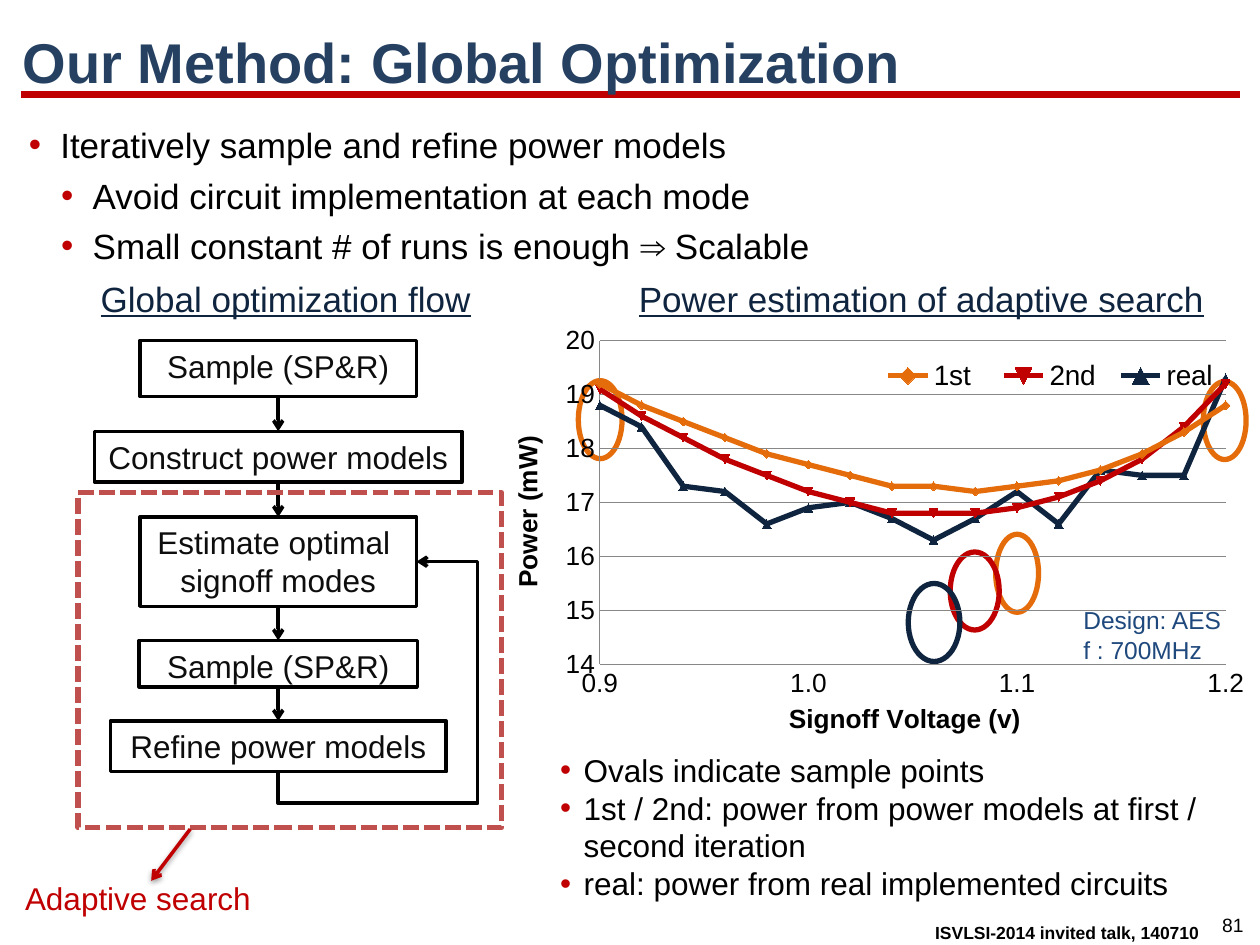
"""Build the slide on global optimization with adaptive search."""
from itertools import pairwise
from lxml.etree import SubElement
from pptx import Presentation
from pptx.chart.data import XyChartData
from pptx.dml.color import RGBColor
from pptx.enum.chart import XL_CHART_TYPE as ChartType, XL_LEGEND_POSITION as LegendPosition
from pptx.enum.chart import XL_MARKER_STYLE as MarkerStyle, XL_TICK_MARK as TickMark
from pptx.enum.dml import MSO_LINE as Dash
from pptx.enum.shapes import MSO_CONNECTOR as Connector, MSO_SHAPE as Shape
from pptx.enum.text import MSO_ANCHOR as Anchor, PP_ALIGN as Align
from pptx.oxml import parse_xml
from pptx.oxml.ns import nsdecls, qn
from pptx.util import Pt

color = RGBColor.from_string
BLACK, RED, NAVY, ORANGE = "000000", "C00000", "0F243E", "E46C0A"


def write(shape, lines, size, ink, align=Align.LEFT, wrap=True, anchor=Anchor.TOP,
          bold=False, underline=False, indents=None, hanging=0, gap=0):
    """Put paragraphs in a shape, with red bullets where indents are given."""
    frame = shape.text_frame
    frame.word_wrap, frame.vertical_anchor = wrap, anchor
    for index, line in enumerate(lines):
        paragraph = frame.paragraphs[0] if index == 0 else frame.add_paragraph()
        paragraph.text = line
        paragraph.alignment = align
        if indents:
            properties = paragraph._p.get_or_add_pPr()
            properties.set("marL", str(Pt(indents[index])))
            properties.set("indent", str(Pt(-hanging)))
            bullet_color = SubElement(properties, qn("a:buClr"))
            SubElement(bullet_color, qn("a:srgbClr"), val=RED)
            SubElement(properties, qn("a:buFont"), typeface="Arial")
            SubElement(properties, qn("a:buChar"), char="•")
        if index and gap:
            paragraph.space_before = Pt(gap)
        font = paragraph.font
        font.name, font.size, font.color.rgb = "Arial", Pt(size), color(ink)
        font.bold = bold
        if underline:
            font.underline = True


def draw_line(shape, ink, width, arrow=False):
    """Style an outline without a shadow, with an arrowhead at its end if asked."""
    shape.line.color.rgb, shape.line.width = color(ink), Pt(width)
    properties = shape._element.spPr
    if arrow:
        SubElement(properties.find(qn("a:ln")), qn("a:tailEnd"), type="arrow")
    if properties.find(qn("a:effectLst")) is None:
        SubElement(properties, qn("a:effectLst"))


presentation = Presentation()
presentation.slide_width, presentation.slide_height = Pt(720), Pt(540)
slide = presentation.slides.add_slide(presentation.slide_layouts[6])
shapes = slide.shapes

title_rule = shapes.add_connector(Connector.STRAIGHT, Pt(12), Pt(54), Pt(708.5), Pt(54))
draw_line(title_rule, RED, 4.5)

texts = [
    ((690.5, 518.4, 28, 21), ["81"], 11, BLACK, dict(align=Align.CENTER, wrap=False)),
    ((499, 523.4, 193, 19), ["ISVLSI-2014 invited talk, 140710"], 10, BLACK,
     dict(align=Align.RIGHT, bold=True)),
    ((6, 12.5, 714, 44.5), ["Our Method: Global Optimization"], 32, "254061",
     dict(anchor=Anchor.MIDDLE, bold=True)),
    ((9.4, 67, 695.5, 91.5),
     ["Iteratively sample and refine power models",
      "Avoid circuit implementation at each mode",
      "Small constant # of runs is enough ⇒ Scalable"], 20, BLACK,
     dict(indents=[18, 36.5, 36.5], hanging=18, gap=5)),
    ((7.2, 499, 165, 29), ["Adaptive search"], 18, RED, {}),
    ((50.4, 155, 234, 31.5), ["Global optimization flow"], 20, NAVY, dict(underline=True)),
    ((358, 155, 342, 31.5), ["Power estimation of adaptive search"], 20, NAVY,
     dict(underline=True)),
    ((313, 425.5, 379, 94.5),
     ["Ovals indicate sample points",
      "1st / 2nd: power from power models at first / second iteration",
      "real: power from real implemented circuits"], 18, BLACK,
     dict(indents=[13.5] * 3, hanging=13.5)),
    ((612, 345.6, 97, 34), ["Design: AES", "f : 700MHz"], 14, "1F497D",
     dict(anchor=Anchor.MIDDLE)),
]
for place, lines, size, ink, options in texts:
    write(shapes.add_textbox(*map(Pt, place)), lines, size, ink, **options)

flow_center = 159
flow_steps = [
    (194.5, 158, 32, ["Sample (SP&R)"]),
    (246.5, 210, 29, ["Construct power models"]),
    (295.5, 158, 51, ["Estimate optimal ", "signoff modes"]),
    (366, 159, 26.5, ["Sample (SP&R)"]),
    (412, 192, 29, ["Refine power models"]),
]
boxes = []
for top, width, height, lines in flow_steps:
    box = shapes.add_shape(Shape.RECTANGLE, Pt(flow_center - width / 2), Pt(top),
                           Pt(width), Pt(height))
    box.fill.solid()
    box.fill.fore_color.rgb = color("FFFFFF")
    box.shadow.inherit = False
    draw_line(box, BLACK, 2)
    write(box, lines, 18, "0D0D0D", align=Align.CENTER, wrap=False)
    boxes.append(box)
for upper, lower in pairwise(boxes):
    connector = shapes.add_connector(Connector.STRAIGHT, 0, 0, 0, 0)
    connector.begin_connect(upper, 2)
    connector.end_connect(lower, 0)
    draw_line(connector, BLACK, 2, arrow=True)

loop_builder = shapes.build_freeform(Pt(flow_center), Pt(441))
loop_builder.add_line_segments(
    [(Pt(x), Pt(y)) for x, y in [(flow_center, 459), (273, 459), (273, 321), (238, 321)]],
    close=False)
loop = loop_builder.convert_to_shape()
loop.fill.background()
loop.shadow.inherit = False
draw_line(loop, BLACK, 2, arrow=True)

search_frame = shapes.add_shape(Shape.RECTANGLE, Pt(44.6), Pt(281.5), Pt(242), Pt(191.5))
search_frame.fill.background()
search_frame.shadow.inherit = False
draw_line(search_frame, "C0504D", 3)
search_frame.line.dash_style = Dash.SQUARE_DOT

pointer = shapes.add_connector(Connector.STRAIGHT, Pt(108.7), Pt(473.8), Pt(86.4), Pt(503.3))
draw_line(pointer, RED, 2, arrow=True)
effects = pointer._element.spPr.find(qn("a:effectLst"))
shadow = SubElement(effects, qn("a:outerShdw"), blurRad="40000", dist="20000",
                    dir="5400000", rotWithShape="0")
shadow_color = SubElement(shadow, qn("a:srgbClr"), val=BLACK)
SubElement(shadow_color, qn("a:alpha"), val="38000")

ovals = [(330.5, 217.5, 25, ORANGE), (569, 305.3, 24.5, ORANGE), (687.6, 218, 24.5, ORANGE),
         (543, 315.4, 28, RED), (519, 333.4, 29.5, NAVY)]
for left, top, width, ink in ovals:
    oval = shapes.add_shape(Shape.OVAL, Pt(left), Pt(top), Pt(width), Pt(44.6))
    oval.fill.background()
    oval.shadow.inherit = False
    draw_line(oval, ink, 3)

power_series = [
    ("1st ", ORANGE, [19.2, 18.8, 18.5, 18.2, 17.9, 17.7, 17.5, 17.3,
                      17.3, 17.2, 17.3, 17.4, 17.6, 17.9, 18.3, 18.8]),
    ("2nd", RED, [19.1, 18.6, 18.2, 17.8, 17.5, 17.2, 17, 16.8,
                  16.8, 16.8, 16.9, 17.1, 17.4, 17.8, 18.4, 19.2]),
    ("real", NAVY, [18.8, 18.4, 17.3, 17.2, 16.6, 16.9, 17, 16.7,
                    16.3, 16.7, 17.2, 16.6, 17.6, 17.5, 17.5, 19.3]),
]
chart_data = XyChartData()
for name, ink, powers in power_series:
    data_series = chart_data.add_series(name)
    for step, power in enumerate(powers):
        data_series.add_data_point(round(0.9 + 0.02 * step, 2), power)
chart = shapes.add_chart(ChartType.XY_SCATTER_SMOOTH, Pt(286), Pt(183.6), Pt(433.5), Pt(240),
                         chart_data).chart
chart.has_title = False
chart.font.name, chart.font.size, chart.font.color.rgb = "Arial", Pt(20), color(BLACK)
chart.plots[0].vary_by_categories = False

for index, (series, (name, ink, powers)) in enumerate(zip(chart.plots[0].series, power_series)):
    series._element.find(qn("c:idx")).set("val", str(index + 1))
    series.smooth = True
    series.format.line.color.rgb, series.format.line.width = color(ink), Pt(3)
    marker = series.marker
    marker.style, marker.size = MarkerStyle.AUTOMATIC, 5
    marker.format.fill.solid()
    marker.format.fill.fore_color.rgb = color(ink)
    marker.format.line.color.rgb = color(ink)

axes = [(chart.category_axis, "Signoff Voltage (v)", 0.9, 1.2, 0.1, "#,##0.0"),
        (chart.value_axis, "Power (mW)", 14, 20, 1, "General")]
for axis, caption, low, high, unit, number_format in axes:
    axis.minimum_scale, axis.maximum_scale, axis.major_unit = low, high, unit
    axis.major_tick_mark = axis.minor_tick_mark = TickMark.NONE
    axis.tick_labels.number_format = number_format
    axis.tick_labels.number_format_is_linked = False
    axis.tick_labels.font.size = Pt(15)
    axis.format.line.color.rgb = color("878787")
    axis.has_major_gridlines = axis is chart.value_axis
    paragraph = axis.axis_title.text_frame.paragraphs[0]
    paragraph.text = caption
    paragraph.font.name, paragraph.font.size, paragraph.font.bold = "Arial", Pt(15), True
    paragraph.font.color.rgb = color(BLACK)
chart.value_axis.major_gridlines.format.line.color.rgb = color("878787")

chart.has_legend = True
legend = chart.legend
legend.position, legend.include_in_layout = LegendPosition.TOP, True
legend.font.name, legend.font.size = "Arial", Pt(16)
plot_area = chart._chartSpace.chart.plotArea
for old_layout in plot_area.findall(qn("c:layout")) + legend._element.findall(qn("c:layout")):
    old_layout.getparent().remove(old_layout)
layouts = [(plot_area, 0, '<c:layoutTarget val="inner"/>', (0.131, 0.046, 0.825, 0.771)),
           (legend._element, 1, "", (0.49, 0.08, 0.47, 0.1))]
for parent, position, target, fractions in layouts:
    modes = '<c:xMode val="edge"/><c:yMode val="edge"/>'
    sides = "".join(f'<c:{side} val="{value}"/>' for side, value in zip("xywh", fractions))
    parent.insert(position, parse_xml(
        f'<c:layout {nsdecls("c")}><c:manualLayout>{target}{modes}{sides}'
        '</c:manualLayout></c:layout>'))

presentation.save("out.pptx")
